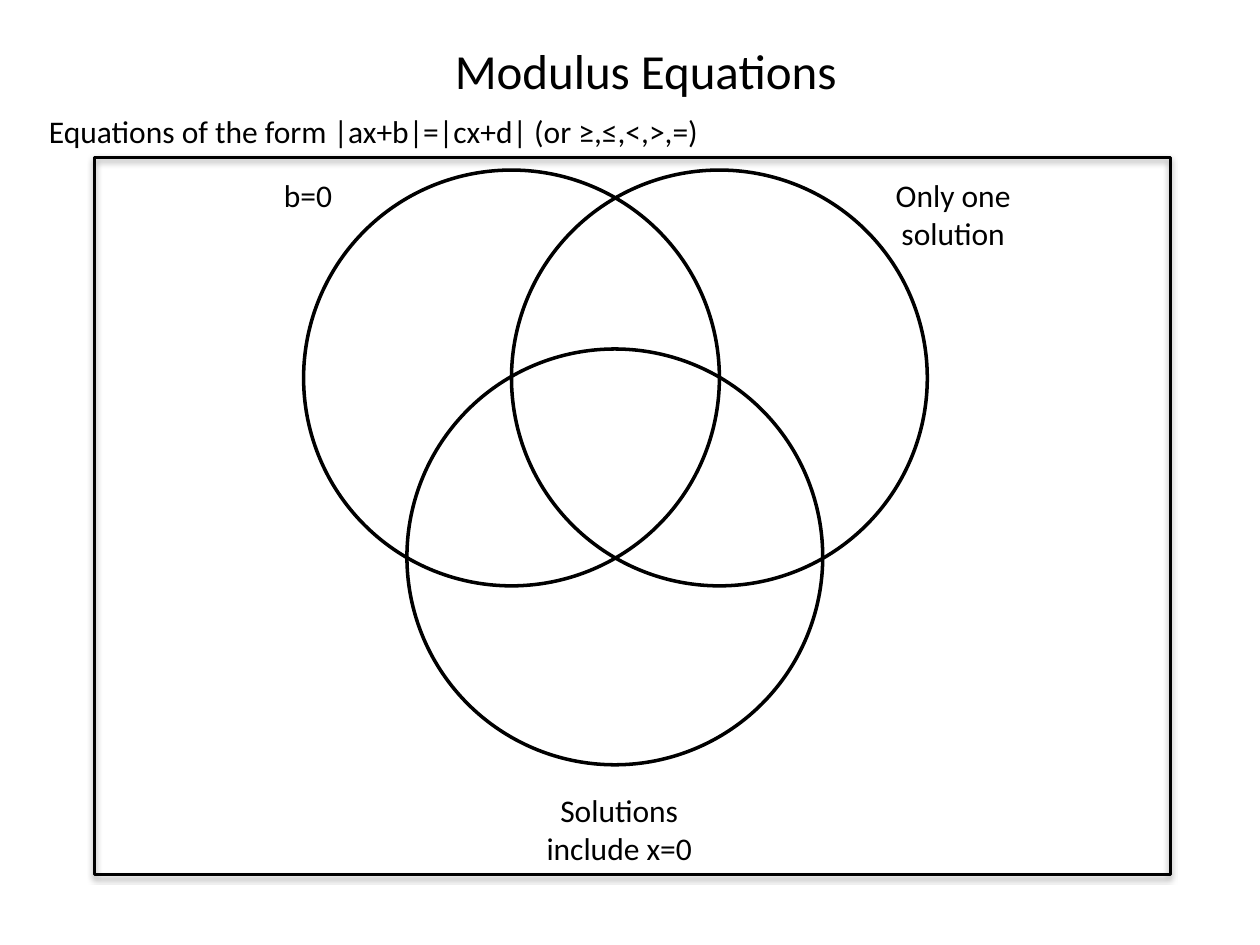
from lxml import etree
from pptx import Presentation
from pptx.dml.color import RGBColor
from pptx.enum.shapes import MSO_SHAPE
from pptx.enum.text import MSO_ANCHOR, MSO_AUTO_SIZE, PP_ALIGN
from pptx.oxml.ns import qn
from pptx.util import Inches, Pt

BLACK = RGBColor(0, 0, 0)
FONT = "Calibri"
OVAL, RECTANGLE = MSO_SHAPE.OVAL, MSO_SHAPE.RECTANGLE
TOP = MSO_ANCHOR.TOP
FIT_SHAPE = MSO_AUTO_SIZE.SHAPE_TO_FIT_TEXT
LEFT, CENTER = PP_ALIGN.LEFT, PP_ALIGN.CENTER

DIAMETER = 3.3
CIRCLES = [(2.41, 1.35), (4.06, 1.35), (3.23, 2.77)]
LABELS = [
    ("b=0", 1.66, 1.35, 0.4),
    ("Only one solution", 6.78, 1.35, 0.71),
    ("Solutions include x=0", 4.13, 6.23, 0.71),
]
LABEL_WIDTH = 1.57


def place(shape, left, top, width, height):
    """Set the position and size of a shape in inches."""
    shape.left, shape.top = Inches(left), Inches(top)
    shape.width, shape.height = Inches(width), Inches(height)


def set_text(box, text, size, align, wrap):
    """Write one formatted paragraph into a box."""
    frame = box.text_frame
    frame.text = text
    frame.word_wrap = wrap
    frame.auto_size = FIT_SHAPE
    frame.vertical_anchor = TOP
    para = frame.paragraphs[0]
    para.alignment = align
    font = para.runs[0].font
    font.name, font.size = FONT, Pt(size)
    font.color.rgb = BLACK


def add_text(slide, text, left, top, width, height, align, wrap):
    """Add a text box in the body size."""
    box = slide.shapes.add_textbox(
        Inches(left), Inches(top), Inches(width), Inches(height))
    set_text(box, text, 18, align, wrap)


def add_outline(shapes, kind, left, top, width, height):
    """Add an unfilled shape with a black outline."""
    shape = shapes.add_shape(
        kind, Inches(left), Inches(top), Inches(width), Inches(height))
    shape.fill.background()
    shape.line.color.rgb = BLACK
    shape.line.width = Pt(2)
    shape.shadow.inherit = False
    return shape


def add_soft_shadow(shape):
    """Give a shape a faint shadow below it."""
    effects = shape._element.spPr.find(qn("a:effectLst"))
    shadow = etree.SubElement(
        effects, qn("a:outerShdw"), blurRad=str(Pt(3.1)), dist=str(Pt(1.8)),
        dir="5400000", rotWithShape="0")
    color = etree.SubElement(shadow, qn("a:srgbClr"), val=str(BLACK))
    etree.SubElement(color, qn("a:alpha"), val="35000")


def main():
    """Build the Venn diagram slide."""
    deck = Presentation()
    deck.slide_width, deck.slide_height = Inches(10), Inches(7.5)
    page = deck.slides.add_slide(deck.slide_layouts[5])

    title = page.shapes.title
    place(title, 3.51, 0.27, 3.27, 0.57)
    set_text(title, "Modulus Equations", 28, LEFT, False)

    venn = page.shapes.add_group_shape()
    for left, top in CIRCLES:
        add_outline(venn.shapes, OVAL, left, top, DIAMETER, DIAMETER)
    for text, left, top, height in LABELS:
        add_text(page, text, left, top, LABEL_WIDTH, height, CENTER, True)
    add_text(page, "Equations of the form |ax+b|=|cx+d| (or ≥,≤,<,>,=)",
             0.29, 0.84, 5.42, 0.4, LEFT, False)

    universe = add_outline(page.shapes, RECTANGLE, 0.75, 1.25, 8.54, 5.69)
    add_soft_shadow(universe)

    deck.save("out.pptx")


if __name__ == "__main__":
    main()
